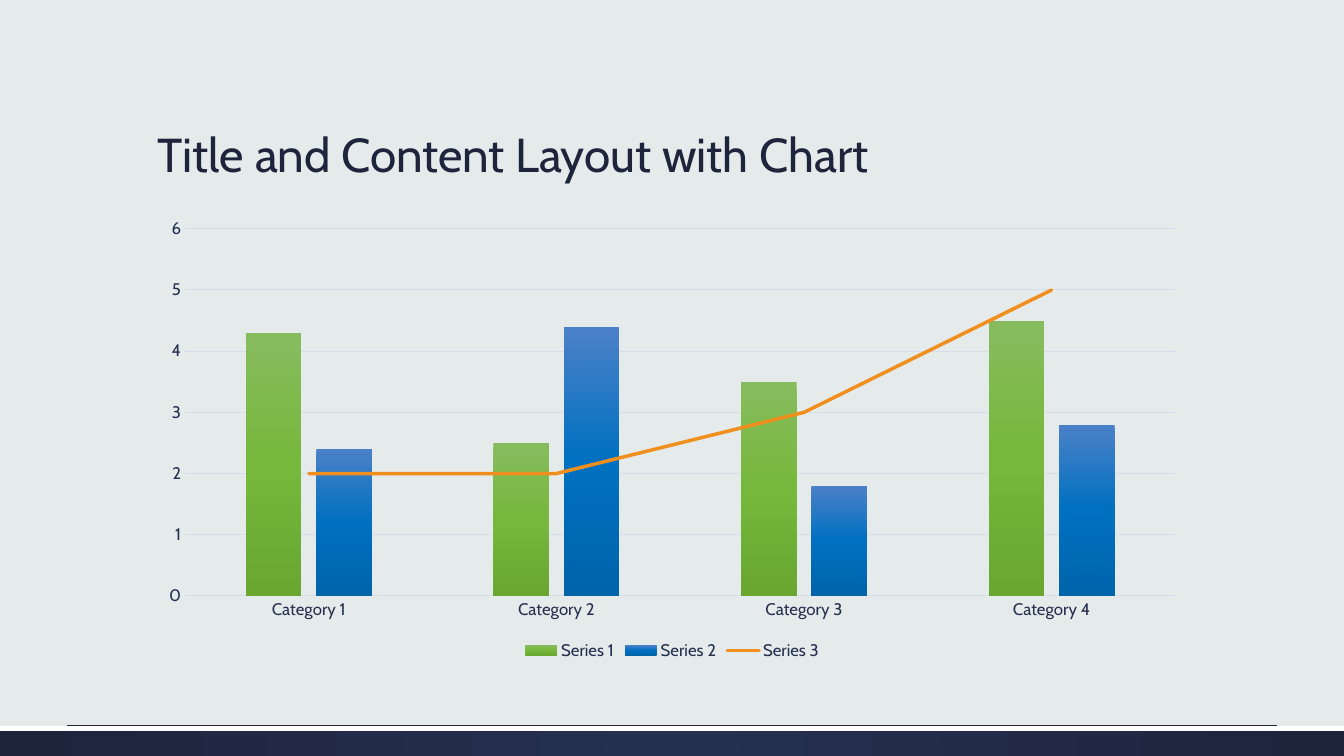
from lxml import etree
from pptx import Presentation
from pptx.chart.data import CategoryChartData
from pptx.dml.color import RGBColor
from pptx.enum.chart import XL_CHART_TYPE, XL_LEGEND_POSITION, XL_TICK_MARK
from pptx.enum.shapes import MSO_CONNECTOR, MSO_SHAPE
from pptx.enum.text import MSO_ANCHOR
from pptx.oxml import parse_xml
from pptx.oxml.ns import nsdecls, qn
from pptx.util import Pt

BARS = XL_CHART_TYPE.COLUMN_CLUSTERED
BOTTOM = XL_LEGEND_POSITION.BOTTOM
NO_TICK = XL_TICK_MARK.NONE
RECT = MSO_SHAPE.RECTANGLE
STRAIGHT = MSO_CONNECTOR.STRAIGHT
LOW = MSO_ANCHOR.BOTTOM

FONT = "Cabin"
COLORS = {
    "back": "E5EAEA", "white": "FFFFFF", "dark": "1D243C", "navy": "263050",
    "grid": "D7DCEC", "orange": "F08F1E",
    "green1": "87BC5E", "green2": "77B73C", "green3": "69A731",
    "blue1": "4B81C8", "blue2": "0070C0", "blue3": "0064AB",
}
DOWN = '<a:lin ang="5400000" scaled="0"/>'
ROUND = ('<a:path path="circle"><a:fillToRect l="50000" t="50000" '
         'r="50000" b="50000"/></a:path>')


def rgb(name):
    return RGBColor.from_string(COLORS[name])


def blend(fill, props, names, shade):
    """Fill a shape or a series with evenly spaced gradient stops."""
    fill.background()
    step = 100000 // (len(names) - 1)
    stops = "".join(
        f'<a:gs pos="{i * step}"><a:srgbClr val="{COLORS[name]}"/></a:gs>'
        for i, name in enumerate(names))
    grad = parse_xml(f'<a:gradFill {nsdecls("a")} rotWithShape="1">'
                     f'<a:gsLst>{stops}</a:gsLst>{shade}</a:gradFill>')
    props.replace(props.find(qn("a:noFill")), grad)


deck = Presentation()
deck.slide_width, deck.slide_height = Pt(960), Pt(540)
slide = deck.slides.add_slide(deck.slide_layouts[6])
slide.background.fill.solid()
slide.background.fill.fore_color.rgb = rgb("back")
shapes = slide.shapes

# Footer band with a white strip on top
band = shapes.add_shape(RECT, 0, Pt(518.4), Pt(960), Pt(21.6))
strip = shapes.add_shape(RECT, 0, Pt(518.4), Pt(960), Pt(3.6))
for bar in (band, strip):
    bar.shadow.inherit = False
    bar.line.fill.background()
blend(band.fill, band._element.spPr, ["navy", "dark"], ROUND)
strip.fill.solid()
strip.fill.fore_color.rgb = rgb("white")

# Thin rule above the footer
rule = shapes.add_connector(STRAIGHT, Pt(48), Pt(518), Pt(912), Pt(518))
rule.line.color.rgb = rgb("dark")
rule.line.width = Pt(0.75)
etree.SubElement(rule._element.spPr, qn("a:effectLst"))

# Title
title = shapes.add_textbox(Pt(105.8), Pt(36.7), Pt(748.8), Pt(97.2))
frame = title.text_frame
frame.word_wrap = True
frame.vertical_anchor = LOW
frame.text = "Title and Content Layout with Chart"
para = frame.paragraphs[0]
para.line_spacing = 0.9
font = para.runs[0].font
font.name, font.size = FONT, Pt(34)
font.color.rgb = rgb("dark")

# Chart
data = CategoryChartData()
data.categories = [f"Category {n}" for n in range(1, 5)]
data.add_series("Series 1", (4.3, 2.5, 3.5, 4.5))
data.add_series("Series 2", (2.4, 4.4, 1.8, 2.8))
data.add_series("Series 3", (2, 2, 3, 5))
chart = shapes.add_chart(BARS, Pt(105.8), Pt(149.8), Pt(748.8), Pt(324.7),
                         data).chart
chart.has_title = False
chart.font.name, chart.font.size = FONT, Pt(12)
chart.font.color.rgb = rgb("navy")
chart.has_legend = True
chart.legend.position = BOTTOM
chart.legend.include_in_layout = False

# Axes
cats, vals = chart.category_axis, chart.value_axis
for axis in (cats, vals):
    axis.major_tick_mark = axis.minor_tick_mark = NO_TICK
vals.minimum_scale, vals.maximum_scale, vals.major_unit = 0, 6, 1
vals.format.line.fill.background()
vals.has_major_gridlines = True
for line in (cats.format.line, vals.major_gridlines.format.line):
    line.color.rgb = rgb("grid")
    line.width = Pt(0.75)

# Columns
plot = chart.plots[0]
plot.vary_by_categories = False
plot.gap_width, plot.overlap = 219, -27
first, second, trend = plot.series
for item, hue in ((first, "green"), (second, "blue")):
    item.invert_if_negative = False
    fill = item.format.fill
    blend(fill, item._element.spPr, [f"{hue}{n}" for n in (1, 2, 3)], DOWN)

# Third series becomes a line on the same axes
trend.format.line.color.rgb = rgb("orange")
trend.format.line.width = Pt(2.5)
ser = trend._element
props = ser.find(qn("c:spPr"))
props.find(qn("a:ln")).set("cap", "rnd")
for flag in ser.findall(qn("c:invertIfNegative")):
    ser.remove(flag)
props.addnext(parse_xml(
    f'<c:marker {nsdecls("c")}><c:symbol val="none"/></c:marker>'))
for old in ser.findall(qn("c:smooth")):
    ser.remove(old)
etree.SubElement(ser, qn("c:smooth")).set("val", "0")
group = parse_xml(f'<c:lineChart {nsdecls("c")}><c:grouping val="standard"/>'
                  '<c:varyColors val="0"/></c:lineChart>')
group.append(ser)
etree.SubElement(group, qn("c:marker")).set("val", "1")
columns = chart._chartSpace.find(".//" + qn("c:barChart"))
for ref in columns.findall(qn("c:axId")):
    etree.SubElement(group, qn("c:axId")).set("val", ref.get("val"))
columns.addnext(group)

deck.save("out.pptx")
